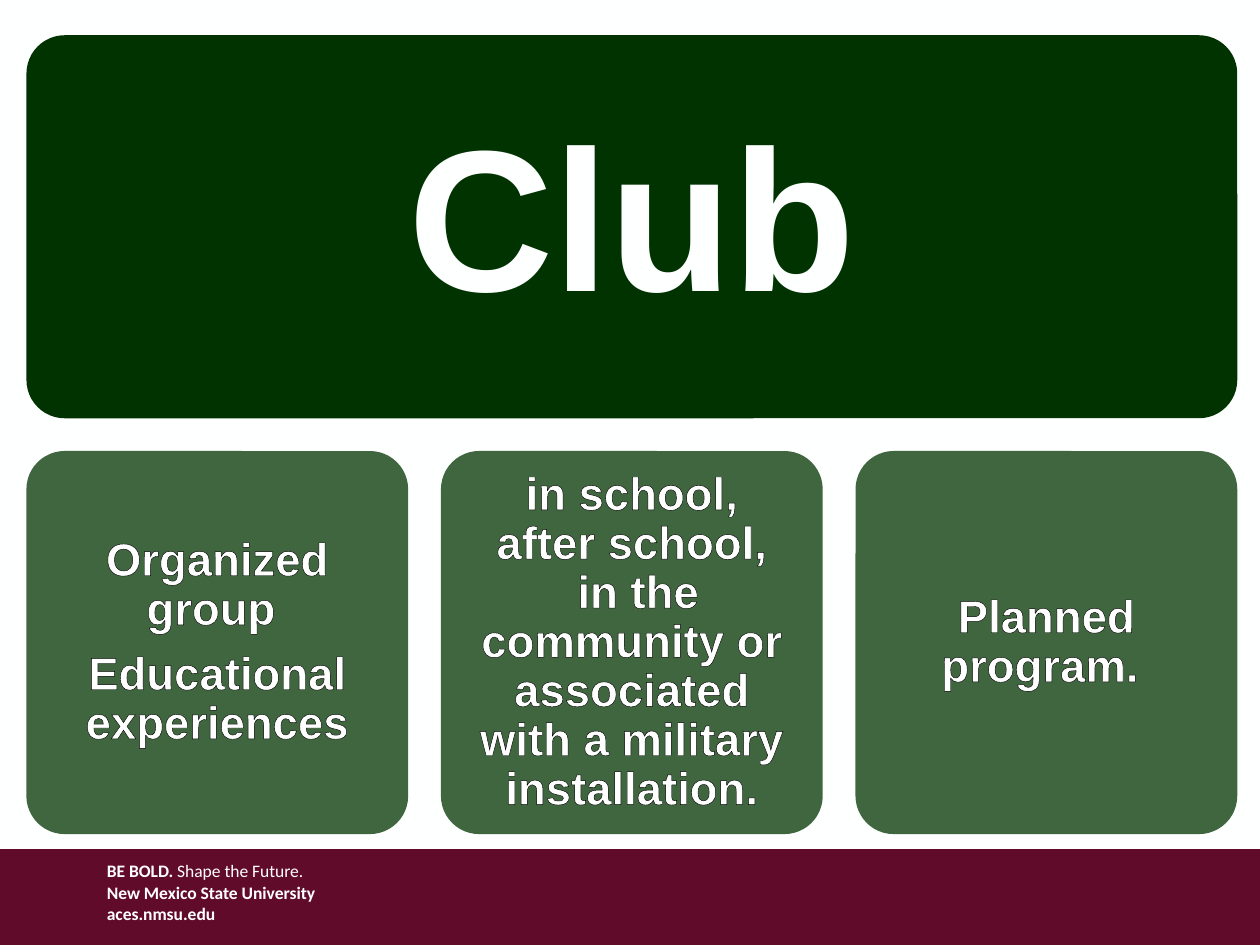
from dataclasses import dataclass

from lxml import etree
from pptx import Presentation
from pptx import util as u
from pptx.dml import color
from pptx.enum import shapes, text
from pptx.oxml import ns


@dataclass(frozen=True)
class Theme:
    back: str = "FEFFFF"
    dark: str = "003300"
    green: str = "406640"
    wine: str = "610B2B"
    white: str = "FFFFFF"
    edge: str = "000000"
    head: float = 115
    body: float = 26
    foot: float = 10
    sans: str = "Arial"
    small: str = "Calibri"


THEME = Theme()
LEFT, GAP = 0.21, 0.26
WIDE, SIDE, HIGH = 9.61, 3.03, 3.04
INSET = 0.09


def rgb(code):
    return color.RGBColor.from_string(code)


def add_block(slide, kind, box, fill):
    shape = slide.shapes.add_shape(kind, *map(u.Inches, box))
    shape.shadow.inherit = False
    shape.fill.solid()
    shape.fill.fore_color.rgb = rgb(fill)
    shape.line.fill.background()
    return shape


def add_text(slide, box):
    frame = slide.shapes.add_textbox(*map(u.Inches, box)).text_frame
    frame.word_wrap = True
    return frame


def add_run(para, words, font, size, ink, bold=True):
    run = para.add_run()
    run.text = words
    run.font.name = font
    run.font.size = u.Pt(size)
    run.font.bold = bold
    run.font.color.rgb = rgb(ink)
    return run


def add_edge(run):
    """Give the letters a thin outline."""
    line = etree.Element(ns.qn("a:ln"), w=str(u.Pt(0.75)))
    fill = etree.SubElement(line, ns.qn("a:solidFill"))
    etree.SubElement(fill, ns.qn("a:srgbClr"), val=THEME.edge)
    run.font._element.insert(0, line)


def add_card(slide, box, fill, paras, size, ink, pad):
    shape = add_block(slide, shapes.MSO_SHAPE.ROUNDED_RECTANGLE, box, fill)
    shape.adjustments[0] = 0.1
    left, top, wide, high = box
    frame = add_text(slide, (left + INSET, top + INSET,
                             wide - 2 * INSET, high - 2 * INSET))
    frame.vertical_anchor = text.MSO_ANCHOR.MIDDLE
    frame.margin_left = frame.margin_right = u.Inches(pad)
    frame.margin_top = frame.margin_bottom = u.Inches(pad)
    for i, lines in enumerate(paras):
        para = frame.add_paragraph() if i else frame.paragraphs[0]
        para.alignment = text.PP_ALIGN.CENTER
        para.line_spacing = 0.9
        para.space_after = u.Pt(round(size * 0.35))
        for j, words in enumerate(lines):
            if j:
                para.add_line_break()
            add_edge(add_run(para, words, THEME.sans, size, ink))


def add_foot(slide):
    add_block(slide, shapes.MSO_SHAPE.RECTANGLE,
              (0, 6.74, 10, 0.76), THEME.wine)
    frame = add_text(slide, (0.75, 6.78, 2.88, 0.82))
    rows = [
        [("BE BOLD. ", True), ("Shape the Future.", False)],
        [("New Mexico State University", True)],
        [("aces.nmsu.edu", True)],
    ]
    for i, row in enumerate(rows):
        para = frame.add_paragraph() if i else frame.paragraphs[0]
        for words, bold in row:
            add_run(para, words, THEME.small, THEME.foot, THEME.white, bold)


def main():
    deck = Presentation()
    deck.slide_width, deck.slide_height = u.Inches(10), u.Inches(7.5)
    slide = deck.slides.add_slide(deck.slide_layouts[6])
    slide.background.fill.solid()
    slide.background.fill.fore_color.rgb = rgb(THEME.back)

    # Footer band
    add_foot(slide)

    # Title card
    add_card(slide, (LEFT, 0.28, WIDE, HIGH), THEME.dark,
             [["Club"]], THEME.head, THEME.back, 0.48)

    # Row of three cards
    cards = [
        [["Organized group "], ["Educational experiences"]],
        [["in school,", "after school,",
          " in the community or associated with a military installation."]],
        [["Planned program. "]],
    ]
    for i, paras in enumerate(cards):
        add_card(slide, (LEFT + i * (SIDE + GAP), 3.58, SIDE, HIGH),
                 THEME.green, paras, THEME.body, THEME.white, 0.11)

    deck.save("out.pptx")


if __name__ == "__main__":
    main()
